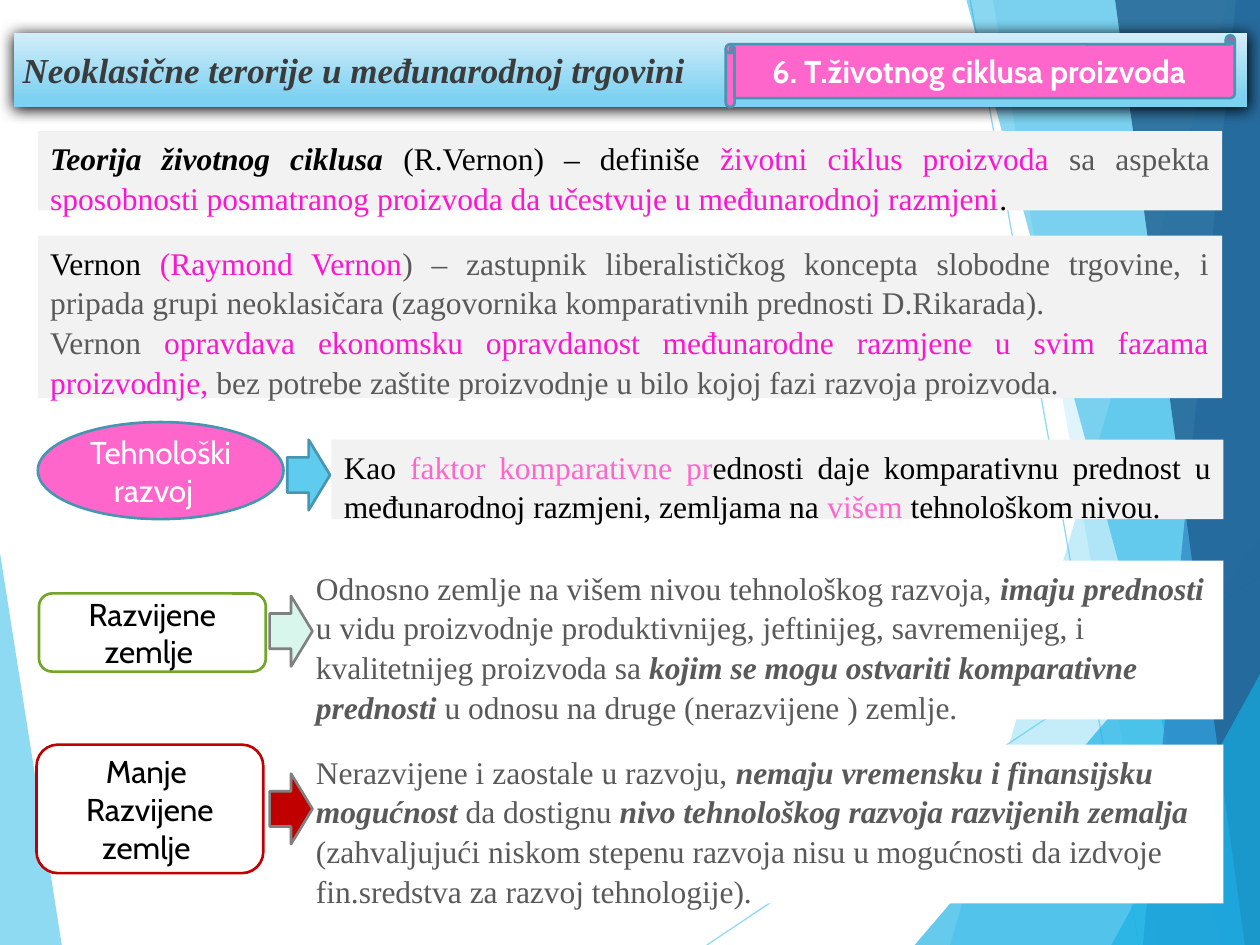
from lxml.etree import SubElement
from pptx import Presentation
from pptx.dml.color import RGBColor
from pptx.enum.shapes import MSO_CONNECTOR, MSO_SHAPE
from pptx.enum.text import MSO_ANCHOR, MSO_AUTO_SIZE, PP_ALIGN
from pptx.oxml.ns import qn
from pptx.util import Inches, Pt


class Theme:
    serif, sans = "Times New Roman", "Cabin"
    head, body = 20, 18
    black, white, dark, gray = "000000", "FFFFFF", "3B3B3B", "595959"
    pale, mid, mint = "F2F2F2", "808080", "D9F6EC"
    pink, hot = "FF66CC", "FB17D0"
    sky, cyan, blue, navy, edge = "5FCBEF", "17B0E4", "2E83C3", "226292", "4696B1"
    green, red = "72A528", "C00000"
    ice, aqua = "D4EEF9", "7DD1F1"


def paint(shape, fill, line=None, alpha=100):
    """Set solid fill, outline and opacity in percent, without a shadow."""
    shape.shadow.inherit = False
    shape.fill.solid()
    shape.fill.fore_color.rgb = RGBColor.from_string(fill)
    if alpha < 100:
        tone = shape.fill._xPr.find(f".//{qn('a:srgbClr')}")
        SubElement(tone, qn("a:alpha"), val=str(alpha * 1000))
    if line:
        shape.line.color.rgb = RGBColor.from_string(line)
        shape.line.width = Pt(1.5)
    else:
        shape.line.fill.background()


def write(shape, paras, font=Theme.serif, size=Theme.body, align=PP_ALIGN.LEFT,
          anchor=MSO_ANCHOR.TOP, space=None):
    """Fill a shape with paragraphs, each a list of (text, colour, style) runs;
    style holds b for bold and i for italic."""
    frame = shape.text_frame
    frame.word_wrap = True
    frame.auto_size = MSO_AUTO_SIZE.NONE
    frame.vertical_anchor = anchor
    for n, runs in enumerate(paras):
        para = frame.add_paragraph() if n else frame.paragraphs[0]
        para.alignment = align
        if space:
            para.line_spacing = space
        for text, color, style in runs:
            run = para.add_run()
            run.text = text
            run.font.name = font
            run.font.size = Pt(size)
            run.font.bold = "b" in style
            run.font.italic = "i" in style
            run.font.color.rgb = RGBColor.from_string(color)


T = Theme
deck = Presentation()
deck.slide_width, deck.slide_height = Inches(10), Inches(7.5)
slide = deck.slides.add_slide(deck.slide_layouts[5])
shapes = slide.shapes

# Background facets, with two thin lines above the first
facets = [
    (T.sky, 70, [(0, 4.39), (0.49, 7.5), (0, 7.5)]),
    (T.sky, 36, [(9.75, 0), (7.54, 7.5), (10, 7.5), (10, 0)]),
    (T.sky, 20, [(7.88, 0), (9.19, 7.5), (10, 7.5), (10, 0)]),
    (T.cyan, 66, [(7.26, 7.5), (10, 4.29), (10, 7.5)]),
    (T.cyan, 50, [(7.67, 0), (9.7, 7.5), (10, 7.5), (10, 0)]),
    (T.blue, 70, [(9.81, 0), (9.07, 7.5), (10, 7.5), (10, 0)]),
    (T.navy, 82, [(8.85, 0), (9.88, 7.5), (10, 7.5), (10, 0)]),
    (T.cyan, 66, [(8.82, 7.5), (10, 5.35), (10, 7.5)]),
]
for n, (color, alpha, points) in enumerate(facets):
    start, *rest = [(Inches(x), Inches(y)) for x, y in points]
    pen = shapes.build_freeform(*start)
    pen.add_line_segments(rest)
    paint(pen.convert_to_shape(), color, alpha=alpha)
    if n == 0:
        for ends in [(5.61, 7.5, 10, 4.57), (7.7, 0, 9.04, 7.5)]:
            ray = shapes.add_connector(MSO_CONNECTOR.STRAIGHT, *map(Inches, ends))
            ray.line.color.rgb = RGBColor.from_string(T.sky)
            ray.line.width = Pt(0.75)
            tone = ray.line._ln.find(f".//{qn('a:srgbClr')}")
            SubElement(tone, qn("a:alpha"), val="70000")
            SubElement(ray._element.spPr, qn("a:effectLst"))

# Title bar: rounded, shaded and shadowed
title = shapes.title
title.left, title.top = Inches(0.11), Inches(0.26)
title.width, title.height = Inches(9.79), Inches(0.59)
props = title._element.spPr
shape_xml = SubElement(props, qn("a:prstGeom"), prst="roundRect")
SubElement(shape_xml, qn("a:avLst"))
title.fill.gradient()
title.fill.gradient_angle = 270
for stop, color, place in zip(title.fill.gradient_stops, (T.ice, T.aqua), (0, 0.88)):
    stop.color.rgb = RGBColor.from_string(color)
    stop.position = place
title.shadow.inherit = False
shade = SubElement(props.find(qn("a:effectLst")), qn("a:outerShdw"),
                   blurRad=str(Pt(8.5)), dist=str(Pt(1)), dir="5400000",
                   algn="ctr", rotWithShape="0")
SubElement(shade, qn("a:srgbClr"), val=T.black)
frame = title.text_frame
frame.margin_left = frame.margin_right = Inches(0.07)
frame.margin_top = frame.margin_bottom = Inches(0.04)
write(title, [[("Neoklasične terorije u međunarodnoj trgovini", T.dark, "bi")]],
      size=T.head, anchor=MSO_ANCHOR.MIDDLE)
title._element.getparent().append(title._element)

# Text panels
J, L = PP_ALIGN.JUSTIFY, PP_ALIGN.LEFT
panels = [
    ((0.3, 1.87, 9.4, 1.29), T.pale, J, [
        [("Vernon", T.black, ""), (" (Raymond Vernon", T.hot, ""),
         (") – zastupnik liberalističkog koncepta slobodne trgovine, i pripada grupi "
          "neoklasičara (zagovornika komparativnih prednosti D.Rikarada). ", T.gray, "")],
        [("Vernon ", T.gray, ""),
         ("opravdava ekonomsku opravdanost međunarodne razmjene u svim fazama "
          "proizvodnje,", T.hot, ""),
         (" bez potrebe zaštite proizvodnje u bilo kojoj fazi razvoja proizvoda. ",
          T.gray, "")]]),
    ((0.3, 1.04, 9.4, 0.63), T.pale, J, [
        [("Teorija životnog ciklusa", T.black, "bi"),
         (" (R.Vernon) – definiše ", T.black, ""),
         ("životni ciklus proizvoda ", T.hot, ""), ("sa aspekta ", T.gray, ""),
         ("sposobnosti posmatranog proizvoda da učestvuje u međunarodnoj razmjeni",
          T.hot, ""), (". ", T.black, "")]]),
    ((2.63, 3.49, 7.08, 0.63), T.pale, J, [
        [("Kao ", T.black, ""), ("faktor komparativne pr", T.pink, ""),
         ("ednosti daje komparativnu prednost u međunarodnoj razmjeni, zemljama na ",
          T.black, ""), ("višem", T.pink, ""), (" tehnološkom nivou. ", T.black, "")]]),
    ((2.41, 4.45, 7.3, 1.26), T.white, L, [
        [("Odnosno zemlje na višem nivou tehnološkog razvoja, ", T.gray, ""),
         ("imaju prednosti ", T.gray, "bi"),
         ("u vidu proizvodnje produktivnijeg, jeftinijeg, savremenijeg, i "
          "kvalitetnijeg proizvoda sa ", T.gray, ""),
         ("kojim se mogu ostvariti komparativne prednosti ", T.gray, "bi"),
         ("u odnosu na druge (nerazvijene ) zemlje.", T.gray, "")]]),
    ((2.41, 5.91, 7.3, 1.26), T.white, L, [
        [("Nerazvijene i zaostale u razvoju, ", T.gray, ""),
         ("nemaju vremensku i finansijsku mogućnost ", T.gray, "bi"),
         ("da dostignu ", T.gray, ""),
         ("nivo tehnološkog razvoja razvijenih zemalja ", T.gray, "bi"),
         ("(zahvaljujući niskom stepenu razvoja nisu u mogućnosti da izdvoje "
          "fin.sredstva za razvoj tehnologije).", T.gray, "")]]),
]
for box, fill, align, paras in panels:
    panel = shapes.add_shape(MSO_SHAPE.RECTANGLE, *map(Inches, box))
    paint(panel, fill)
    write(panel, paras, align=align, space=1.05)

# Labels
ROUND = MSO_SHAPE.ROUNDED_RECTANGLE
labels = [
    (MSO_SHAPE.HORIZONTAL_SCROLL, (5.76, 0.28, 4.04, 0.57), T.pink, T.edge,
     ["6. T.životnog ciklusa proizvoda "], T.white, "b"),
    (MSO_SHAPE.OVAL, (0.3, 3.35, 1.95, 0.77), T.pink, T.edge,
     ["Tehnološki razvoj  "], T.white, ""),
    (ROUND, (0.31, 4.71, 1.8, 0.62), T.white, T.green,
     ["Razvijene zemlje "], T.black, ""),
    (ROUND, (0.29, 5.91, 1.8, 1.02), T.white, T.red,
     ["Manje ", "Razvijene zemlje "], T.black, ""),
]
for kind, box, fill, line, texts, color, style in labels:
    label = shapes.add_shape(kind, *map(Inches, box))
    paint(label, fill, line)
    write(label, [[(text, color, style)] for text in texts], font=T.sans,
          align=PP_ALIGN.CENTER, anchor=MSO_ANCHOR.MIDDLE)

# Arrows from label to panel
for x, y, fill, line in [(2.28, 3.49, T.sky, T.edge), (2.14, 4.73, T.mint, T.mid),
                         (2.14, 6.14, T.red, T.mid)]:
    arrow = shapes.add_shape(MSO_SHAPE.RIGHT_ARROW, Inches(x), Inches(y),
                             Inches(0.34), Inches(0.56))
    paint(arrow, fill, line)

deck.save("out.pptx")
